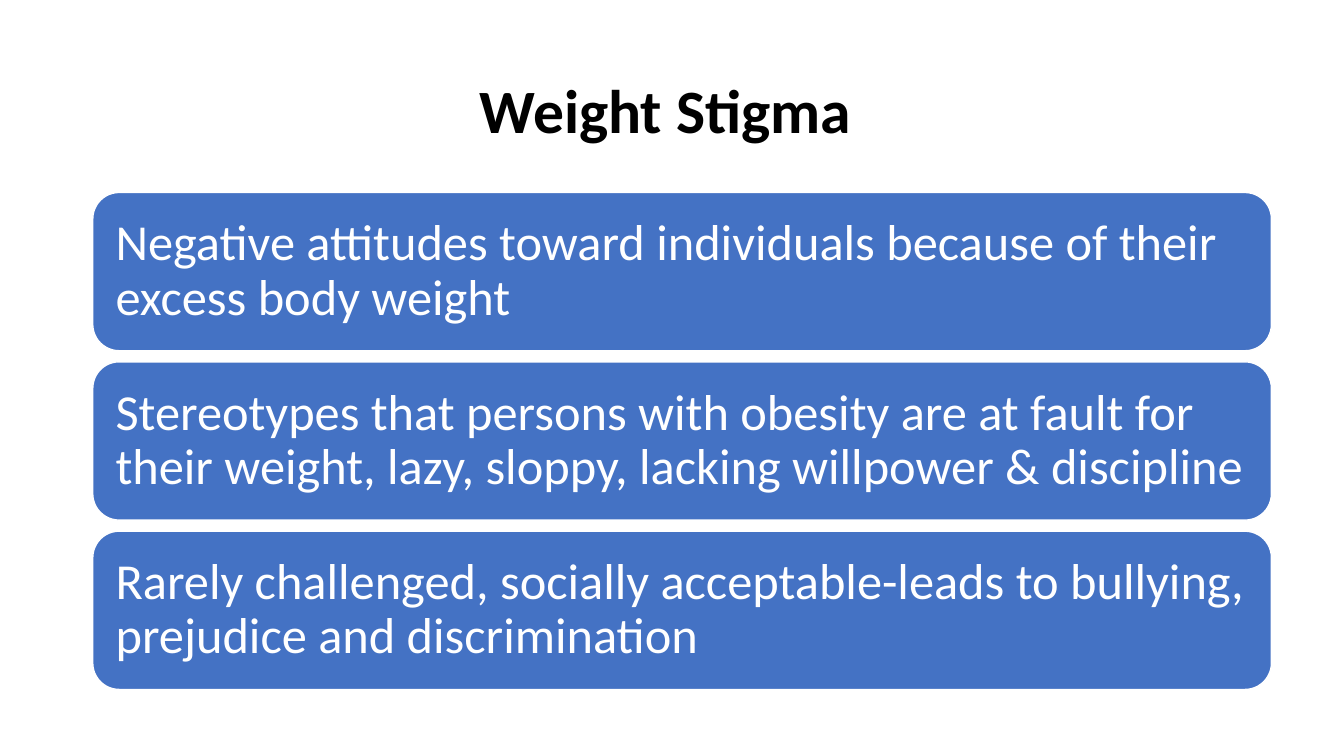
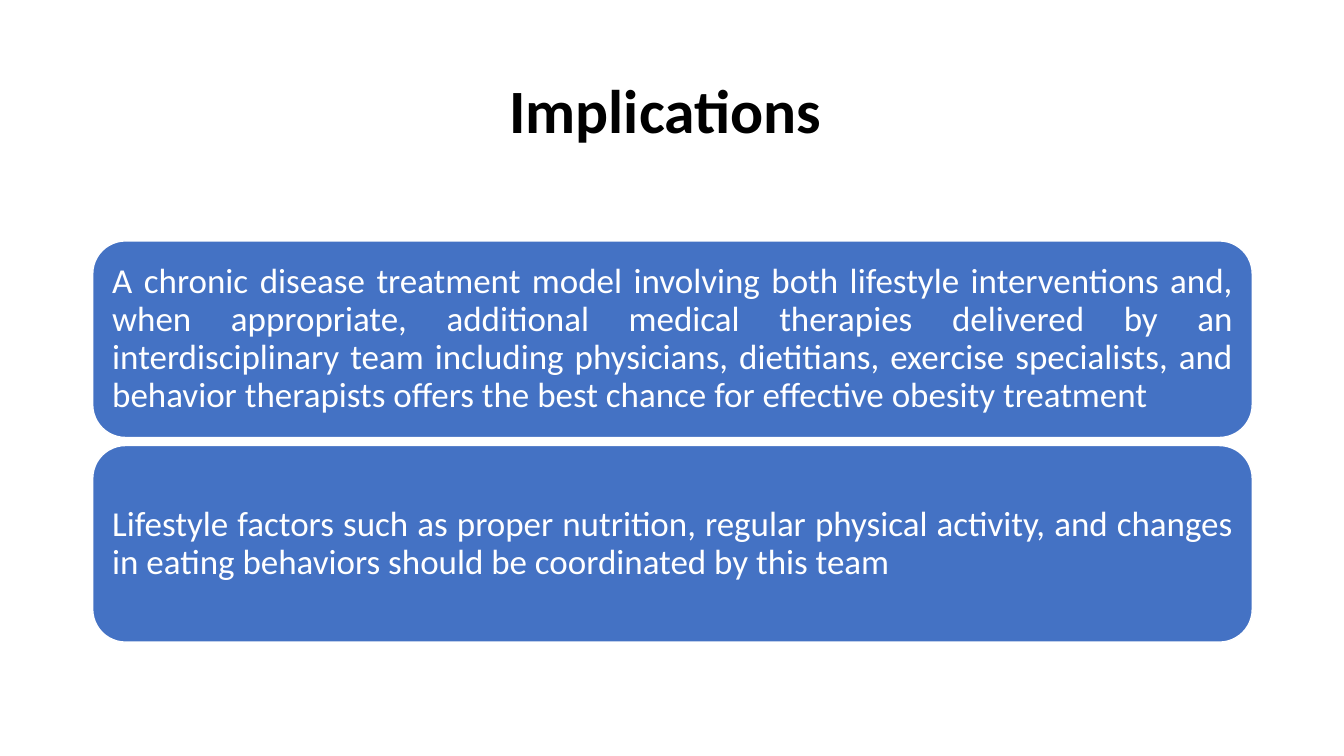
import pptx
import pptx.util
import pptx.dml.color
import pptx.enum.shapes
import pptx.enum.text

Inches = pptx.util.Inches
Pt = pptx.util.Pt
ALIGN = pptx.enum.text.PP_ALIGN

# Content
SLIDES = [
    {
        "title": "Weight Stigma ",
        "cards": [
            "Negative attitudes toward individuals because of their excess body weight",
            "Stereotypes that persons with obesity are at fault for their weight, lazy, "
            "sloppy, lacking willpower & discipline",
            "Rarely challenged, socially acceptable-leads to bullying, prejudice and "
            "discrimination",
        ],
        "top": 1.91, "width": 11.69, "height": 1.57, "gap": 0.11,
        "inset": 0.15, "size": 36, "align": ALIGN.LEFT,
    },
    {
        "title": "Implications ",
        "cards": [
            "A chronic disease treatment model involving both lifestyle interventions and, "
            "when appropriate, additional medical therapies delivered by an "
            "interdisciplinary team including physicians, dietitians, exercise "
            "specialists, and behavior therapists offers the best chance for effective "
            "obesity treatment",
            "Lifestyle factors such as proper nutrition, regular physical activity, and "
            "changes in eating behaviors should be coordinated by this team",
        ],
        "top": 2.39, "width": 11.5, "height": 1.95, "gap": 0.08,
        "inset": 0.1, "size": 25, "align": ALIGN.JUSTIFY,
    },
]

# Shared style
COLORS = {"title": "000000", "card": "4472C4", "white": "FFFFFF"}
FONT = "Calibri"
LEFT = 0.92
TITLE_BOX = (LEFT, 0.4, 11.5, 1.45)


def rgb(name):
    return pptx.dml.color.RGBColor.from_string(COLORS[name])


def set_all(target, values):
    for name, value in values.items():
        setattr(target, name, value)


def write_text(shape, text, color, size, align, insets, bold=False):
    frame = shape.text_frame
    horizontal, vertical = map(Inches, insets)
    set_all(frame, {
        "word_wrap": True,
        "vertical_anchor": pptx.enum.text.MSO_ANCHOR.MIDDLE,
        "margin_left": horizontal, "margin_right": horizontal,
        "margin_top": vertical, "margin_bottom": vertical,
    })
    paragraph = frame.paragraphs[0]
    set_all(paragraph, {"alignment": align, "line_spacing": 0.9})
    run = paragraph.add_run()
    run.text = text
    set_all(run.font, {"name": FONT, "size": Pt(size), "bold": bold})
    run.font.color.rgb = rgb(color)


def add_title(slide, text):
    box = slide.shapes.add_textbox(*map(Inches, TITLE_BOX))
    write_text(box, text, "title", 44, ALIGN.CENTER, (0.1, 0.05), bold=True)


def add_cards(slide, content):
    pitch = content["height"] + content["gap"]
    for index, text in enumerate(content["cards"]):
        place = (LEFT, content["top"] + index * pitch, content["width"], content["height"])
        card = slide.shapes.add_shape(
            pptx.enum.shapes.MSO_SHAPE.ROUNDED_RECTANGLE, *map(Inches, place))
        card.shadow.inherit = False
        card.fill.solid()
        card.fill.fore_color.rgb = rgb("card")
        card.line.color.rgb = rgb("white")
        card.line.width = Pt(1)
        write_text(card, text, "white", content["size"], content["align"],
                   (content["inset"], content["inset"]))


def main():
    presentation = pptx.Presentation()
    set_all(presentation, {"slide_width": Inches(13.33), "slide_height": Inches(7.5)})
    for content in SLIDES:
        slide = presentation.slides.add_slide(presentation.slide_layouts[6])
        add_title(slide, content["title"])
        add_cards(slide, content)
    presentation.save("out.pptx")


if __name__ == "__main__":
    main()
